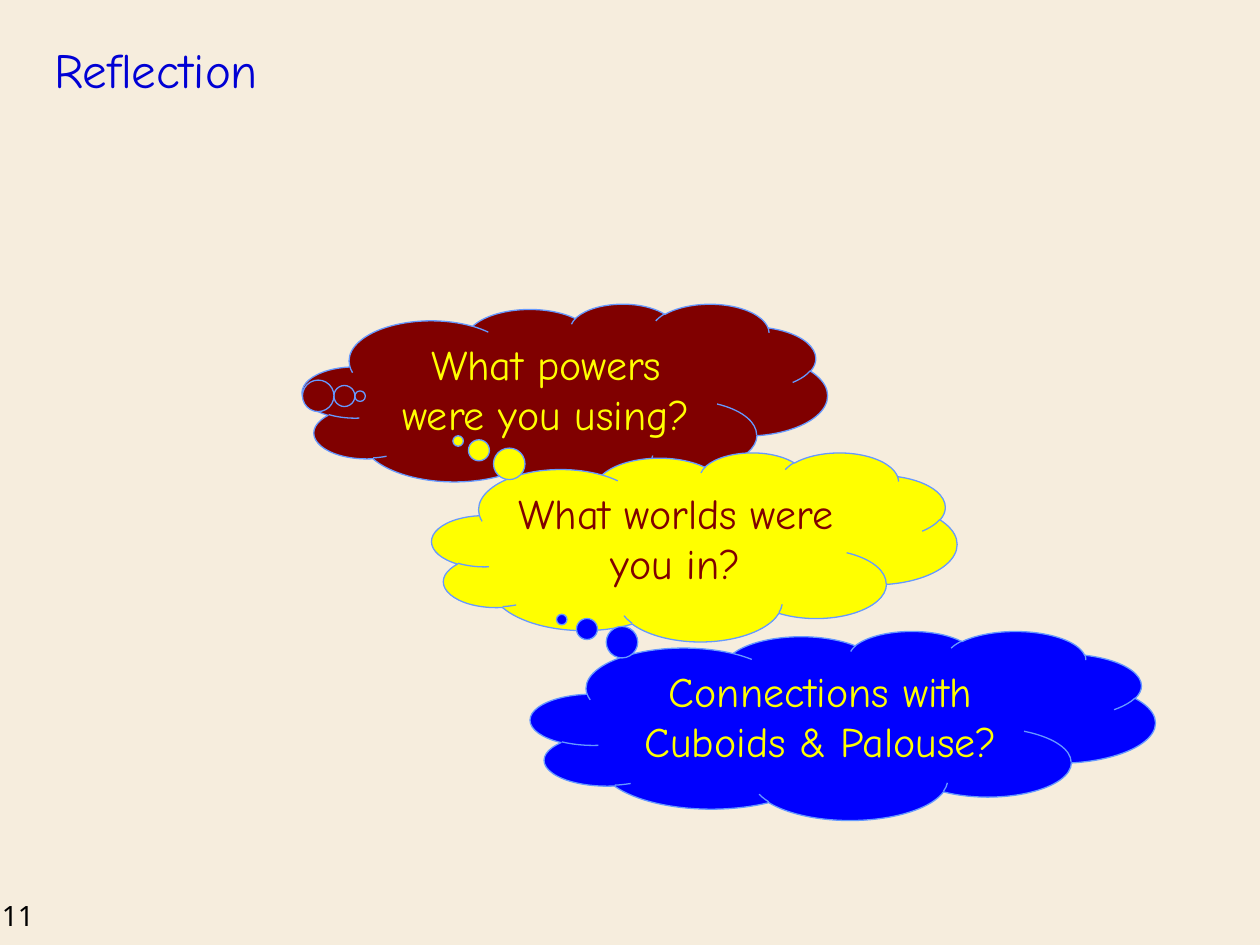
from pptx import Presentation
from pptx.dml.color import RGBColor
from pptx.enum.shapes import MSO_SHAPE
from pptx.enum.text import MSO_ANCHOR, PP_ALIGN
from pptx.util import Pt

CREAM = RGBColor(0xF6, 0xED, 0xDD)
TITLE_BLUE = RGBColor(0x00, 0x00, 0xD4)
MAROON = RGBColor(0x80, 0x00, 0x00)
YELLOW = RGBColor(0xFF, 0xFF, 0x00)
BLUE = RGBColor(0x00, 0x00, 0xFF)
OUTLINE = RGBColor(0x66, 0x99, 0xFF)
BLACK = RGBColor(0x00, 0x00, 0x00)

CLOUD_HEIGHT = 108


def write(frame, text, *, size, color, font="Comic Neue",
          align=PP_ALIGN.LEFT, anchor=MSO_ANCHOR.TOP):
    frame.word_wrap = True
    frame.vertical_anchor = anchor
    paragraph = frame.paragraphs[0]
    paragraph.alignment = align
    run = paragraph.add_run()
    run.text = text
    run.font.name = font
    run.font.size = Pt(size)
    run.font.color.rgb = color


class ReflectionSlide:
    def __init__(self, deck):
        self.slide = deck.slides.add_slide(deck.slide_layouts[6])
        background = self.slide.background.fill
        background.solid()
        background.fore_color.rgb = CREAM

    def label(self, text, left, top, width, height, **style):
        box = self.slide.shapes.add_textbox(
            Pt(left), Pt(top), Pt(width), Pt(height))
        write(box.text_frame, text, **style)

    def thought(self, text, left, top, width, tail, fill, color):
        cloud = self.slide.shapes.add_shape(
            MSO_SHAPE.CLOUD_CALLOUT,
            Pt(left), Pt(top), Pt(width), Pt(CLOUD_HEIGHT))
        cloud.shadow.inherit = False
        cloud.adjustments[0], cloud.adjustments[1] = tail
        cloud.fill.solid()
        cloud.fill.fore_color.rgb = fill
        cloud.line.color.rgb = OUTLINE
        cloud.line.width = Pt(0.75)
        write(cloud.text_frame, text, size=24, color=color,
              align=PP_ALIGN.CENTER)


def main():
    deck = Presentation()
    deck.slide_width, deck.slide_height = Pt(720), Pt(540)
    reflection = ReflectionSlide(deck)

    # Page number and title
    reflection.label("11", -6, 510, 54, 26.6, size=16, color=BLACK,
                     font="Noto Sans")
    reflection.label("Reflection", 24, 12, 612, 48, size=28,
                     color=TITLE_BLUE, anchor=MSO_ANCHOR.BOTTOM)

    # Chain of thoughts, each tail reaching back to the cloud before it
    side_tail, upper_tail = (-0.39, -0.01), (-0.45, -0.56)
    thoughts = [
        ("What powers were you using?", 172.8, 173.5, 300,
         side_tail, MAROON, YELLOW),
        ("What worlds were you in?", 246.8, 258.5, 300,
         upper_tail, YELLOW, MAROON),
        ("Connections with Cuboids & Palouse?", 303.2, 360.5, 357,
         upper_tail, BLUE, YELLOW),
    ]
    for thought in thoughts:
        reflection.thought(*thought)

    deck.save("out.pptx")


if __name__ == "__main__":
    main()
